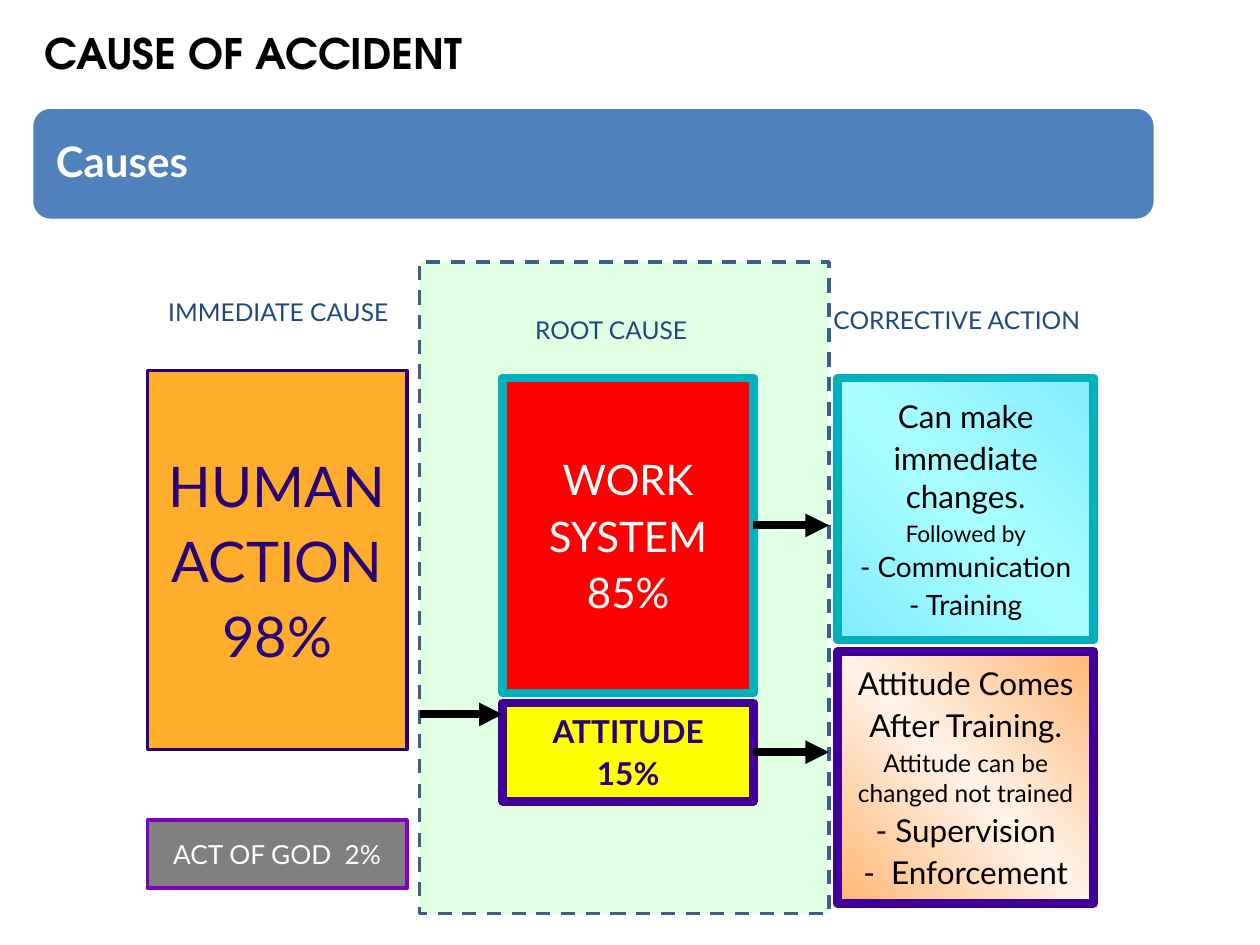
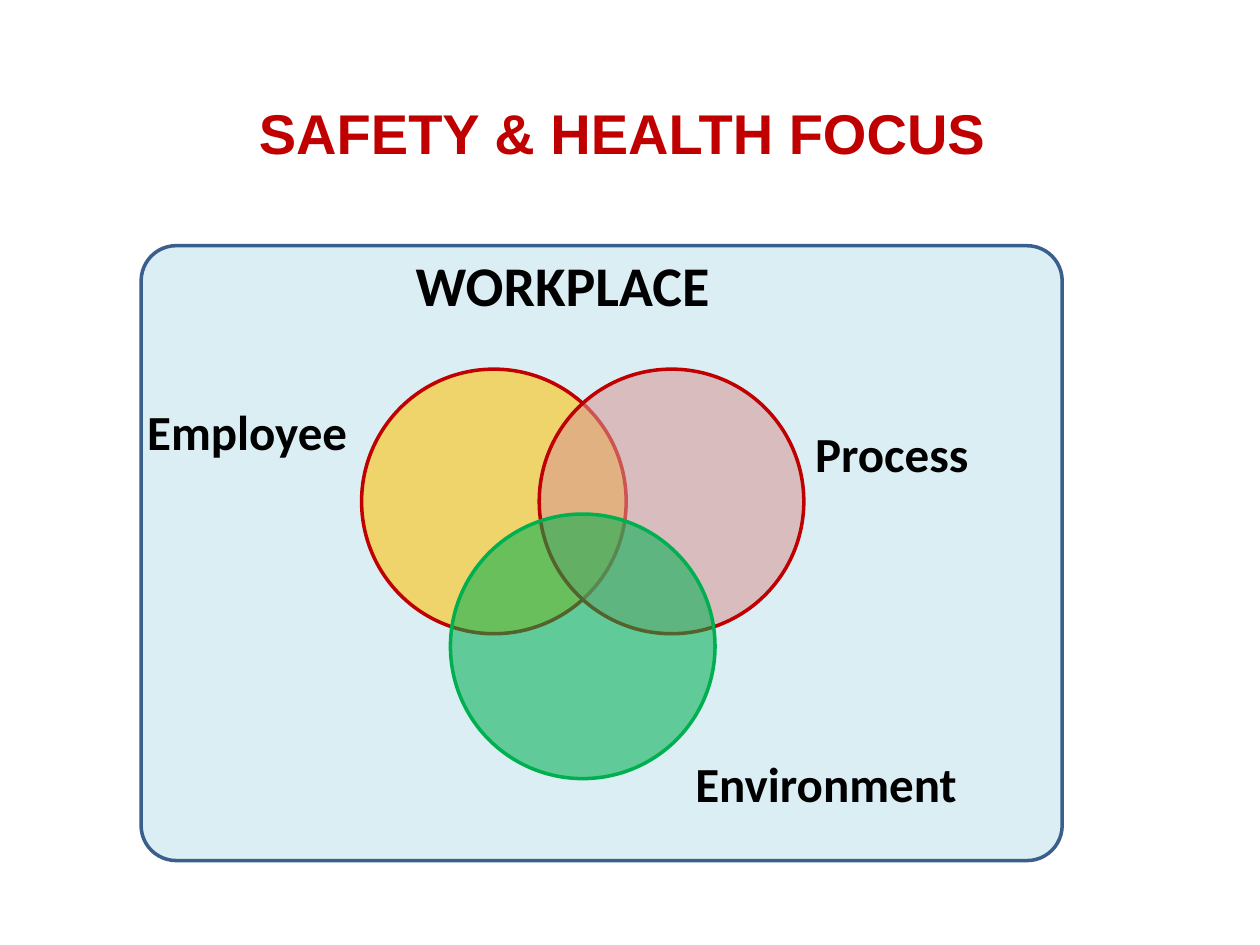
from copy import deepcopy
from dataclasses import dataclass

from pptx import Presentation
from pptx.dml.color import RGBColor
from pptx.enum.dml import MSO_LINE
from pptx.enum.shapes import MSO_CONNECTOR, MSO_SHAPE
from pptx.enum.text import MSO_ANCHOR, MSO_AUTO_SIZE, PP_ALIGN
from pptx.oxml.ns import qn
from pptx.util import Inches, Pt
from lxml.etree import SubElement


@dataclass(frozen=True)
class Theme:
    # Fonts
    heading: str = "TeX Gyre Adventor"
    diagram: str = "Lato"
    focus: str = "Arial"
    venn: str = "Calibri"
    # Colours
    black: str = "000000"
    white: str = "FFFFFF"
    band: str = "4F81BD"
    caption: str = "1F497D"
    outline: str = "3A5F8C"
    navy: str = "280078"
    violet: str = "400097"
    purple: str = "8000C0"
    teal: str = "00B0BC"
    zone: str = "E1FFE2"
    orange: str = "FFAD2C"
    grey: str = "808080"
    red: str = "FF0000"
    yellow: str = "FFFF00"
    cyan_blend: tuple = ("82EBFF", "A9FFFF", "82EBFF")
    peach_blend: tuple = ("FFB672", "FFF3E8", "FFB672")
    crimson: str = "C00000"
    workplace: str = "DBEEF4"
    employee: str = "FFC000"
    process: str = "D99694"
    environment: str = "00B050"
    # Type sizes and line widths in points
    caption_size: int = 14
    section_size: int = 24
    focus_size: int = 32
    venn_size: int = 28
    thin: float = 2
    thick: float = 5
    arrow: float = 4.5
    # Space after a diagram line, as a share of its type size
    gap: float = 0.14


THEME = Theme()


def rgb(code):
    return RGBColor.from_string(code)


def place(shape, box):
    shape.left, shape.top, shape.width, shape.height = map(Inches, box)


def blend(shape, colours):
    """Fill with evenly spaced stops, running from bottom left to top right."""
    shape.fill.gradient()
    shape.fill.gradient_angle = 45
    stop_list = shape.element.spPr.find(".//" + qn("a:gsLst"))
    while len(stop_list) < len(colours):
        stop_list.insert(1, deepcopy(stop_list[0]))
    for i, (stop, colour) in enumerate(zip(shape.fill.gradient_stops, colours)):
        stop.position = i / (len(colours) - 1)
        stop.color.rgb = rgb(colour)


def add_panel(slide, kind, box, fill, line, width=THEME.thin):
    panel = slide.shapes.add_shape(kind, *map(Inches, box))
    panel.shadow.inherit = False
    if isinstance(fill, tuple):
        blend(panel, fill)
    else:
        panel.fill.solid()
        panel.fill.fore_color.rgb = rgb(fill)
    panel.line.color.rgb = rgb(line)
    panel.line.width = Pt(width)
    return panel


def set_insets(frame, side, upright=0):
    frame.margin_left = frame.margin_right = Inches(side)
    frame.margin_top = frame.margin_bottom = Inches(upright)


def style_runs(paragraph, font, size, colour, bold):
    for run in paragraph.runs:
        run.font.name = font
        run.font.size = Pt(size)
        run.font.bold = bold
        run.font.color.rgb = rgb(colour)


def write_lines(frame, lines, colour, bold=False):
    """Write centred (text, size) lines with a gap in proportion to size."""
    set_insets(frame, 0)
    frame.word_wrap = True
    frame.text = "\n".join(text for text, _ in lines)
    for paragraph, (_, size) in zip(frame.paragraphs, lines):
        paragraph.alignment = PP_ALIGN.CENTER
        paragraph.space_after = Pt(size * THEME.gap)
        style_runs(paragraph, THEME.diagram, size, colour, bold)


def add_block(slide, box, fill, line, width, lines, colour, bold=False):
    block = add_panel(slide, MSO_SHAPE.RECTANGLE, box, fill, line, width)
    block.text_frame.vertical_anchor = MSO_ANCHOR.MIDDLE
    write_lines(block.text_frame, lines, colour, bold)
    return block


def add_label(slide, box):
    label = slide.shapes.add_textbox(*map(Inches, box)).text_frame
    label.word_wrap = True
    label.auto_size = MSO_AUTO_SIZE.SHAPE_TO_FIT_TEXT
    return label


def add_caption(slide, box, text):
    write_lines(add_label(slide, box), [(text, THEME.caption_size)], THEME.caption)


def add_arrow(slide, left, right, y, source=None):
    arrow = slide.shapes.add_connector(
        MSO_CONNECTOR.STRAIGHT, *map(Inches, (left, y, right, y)))
    if source is not None:
        arrow.begin_connect(source, 3)
    arrow.line.color.rgb = rgb(THEME.black)
    arrow.line.width = Pt(THEME.arrow)
    SubElement(arrow.line._get_or_add_ln(), qn("a:tailEnd"), type="triangle")
    SubElement(arrow.element.spPr, qn("a:effectLst"))


def set_title(slide, box, text, font, size, colour, align):
    title = slide.shapes.title
    place(title, box)
    frame = title.text_frame
    frame.text = text
    frame.word_wrap = True
    frame.auto_size = MSO_AUTO_SIZE.NONE
    frame.vertical_anchor = MSO_ANCHOR.MIDDLE
    frame.paragraphs[0].alignment = align
    style_runs(frame.paragraphs[0], font, size, colour, True)


def add_section_band(slide, box, text):
    band = add_panel(slide, MSO_SHAPE.ROUNDED_RECTANGLE, box, THEME.band, THEME.white)
    frame = band.text_frame
    frame.text = text
    frame.vertical_anchor = MSO_ANCHOR.MIDDLE
    set_insets(frame, 0.15, 0.1)
    frame.paragraphs[0].alignment = PP_ALIGN.LEFT
    frame.paragraphs[0].line_spacing = 0.9
    style_runs(frame.paragraphs[0], THEME.diagram, THEME.section_size, THEME.white, True)


def add_immediate_causes(slide, box):
    left, top, width, height = box
    add_caption(slide, (left + 0.16, top, 1.76, 0.24), "IMMEDIATE CAUSE")
    add_block(slide, (left, top + 0.58, width, 3.01), THEME.orange, THEME.navy, THEME.thin,
              [("HUMAN", 32), ("ACTION", 32), ("98%", 32)], THEME.navy)
    add_block(slide, (left, top + height - 0.54, width, 0.54), THEME.grey, THEME.purple,
              THEME.thin, [("ACT OF GOD  2%", 15)], THEME.white)


def add_root_causes(slide, box):
    left, top, width, height = box
    right = left + width
    zone = add_panel(slide, MSO_SHAPE.RECTANGLE, box, THEME.zone, THEME.outline)
    zone.line.dash_style = MSO_LINE.DASH
    add_caption(slide, (left + 0.91, top + 0.42, 1.22, 0.24), "ROOT CAUSE")
    # Work system and attitude
    cause_left, cause_width = left + 0.66, 1.99
    add_block(slide, (cause_left, top + 0.92, cause_width, 2.5), THEME.red, THEME.teal,
              THEME.thick, [("WORK", 24), ("SYSTEM", 24), ("85%", 24)], THEME.white)
    attitude = add_block(slide, (cause_left, top + 3.5, cause_width, 0.78), THEME.yellow,
                         THEME.violet, THEME.thick, [("ATTITUDE", 18), ("15%", 18)],
                         THEME.navy, bold=True)
    # Arrows into and out of the causes
    cause_right = cause_left + cause_width
    add_arrow(slide, cause_right, right, top + 2.09)
    add_arrow(slide, cause_right, right, top + 3.89, attitude)
    add_arrow(slide, left, cause_left, top + 3.59)


def add_corrective_actions(slide, box):
    left, top, width, height = box
    add_caption(slide, (left - 0.07, top, width, 0.24), "CORRECTIVE ACTION")
    add_block(slide, (left, top + 0.58, width, 2.08), THEME.cyan_blend, THEME.teal, THEME.thick,
              [("Can make", 18), ("immediate changes.", 18), ("Followed by", 13),
               ("- Communication", 16), ("- Training", 16)], THEME.black)
    add_block(slide, (left, top + height - 2, width, 2), THEME.peach_blend, THEME.violet,
              THEME.thick,
              [("Attitude Comes", 18), ("After Training.", 18),
               ("Attitude can be changed not trained", 14),
               ("- Supervision", 18), ("-  Enforcement", 18)], THEME.black)


def add_venn_label(slide, box, text, size):
    frame = add_label(slide, box)
    frame.text = text
    frame.paragraphs[0].line_spacing = 0.8
    style_runs(frame.paragraphs[0], THEME.venn, size, THEME.black, True)


def add_venn(slide, box):
    """Draw three overlapping circles, the third centred below the others."""
    left, top, width, height = box
    diameter = 2.1
    step, drop = width - diameter, height - diameter
    circles = [
        (0, 0, THEME.employee, THEME.crimson),
        (step, 0, THEME.process, THEME.crimson),
        (step / 2, drop, THEME.environment, THEME.environment),
    ]
    for dx, dy, fill, line in circles:
        circle = add_panel(slide, MSO_SHAPE.OVAL, (left + dx, top + dy, diameter, diameter),
                           fill, line)
        colour = circle.element.spPr.find(qn("a:solidFill"))[0]
        SubElement(colour, qn("a:alpha"), val="56000")


def add_workplace(slide, box):
    left, top, width, height = box
    frame = add_panel(slide, MSO_SHAPE.ROUNDED_RECTANGLE, box, THEME.workplace, THEME.outline)
    frame.adjustments[0] = 0.057
    add_venn_label(slide, (left + 2.08, top + 0.09, 3.57, 0.54), "WORKPLACE", THEME.focus_size)
    add_venn(slide, (left + 1.75, top + 0.98, 3.51, 3.25))
    # Circle labels
    for dx, dy, label_width, text in [(-0.05, 1.28, 2.85, "Employee"),
                                      (5.25, 1.45, 1.82, "Process"),
                                      (4.3, 4.07, 3.02, "Environment")]:
        add_venn_label(slide, (left + dx, top + dy, label_width, 0.49), text, THEME.venn_size)


def build_cause_slide(slide):
    set_title(slide, (0.25, 0, 8, 0.83), "CAUSE OF ACCIDENT", THEME.heading,
              THEME.section_size, THEME.black, PP_ALIGN.LEFT)
    add_section_band(slide, (0.25, 0.85, 8.92, 0.9), "Causes")
    add_root_causes(slide, (3.33, 2.08, 3.25, 5.17))
    add_immediate_causes(slide, (1.17, 2.36, 2.06, 4.69))
    add_corrective_actions(slide, (6.65, 2.42, 2.03, 4.75))


def build_focus_slide(slide):
    set_title(slide, (1.06, 0.68, 7.76, 0.73), "SAFETY & HEALTH FOCUS", THEME.focus,
              THEME.focus_size, THEME.crimson, PP_ALIGN.CENTER)
    add_workplace(slide, (1.12, 1.95, 7.31, 4.88))


def main():
    deck = Presentation()
    deck.slide_width, deck.slide_height = Inches(10), Inches(7.5)
    title_only = deck.slide_layouts[5]
    for build in (build_cause_slide, build_focus_slide):
        build(deck.slides.add_slide(title_only))
    deck.save("out.pptx")


if __name__ == "__main__":
    main()
